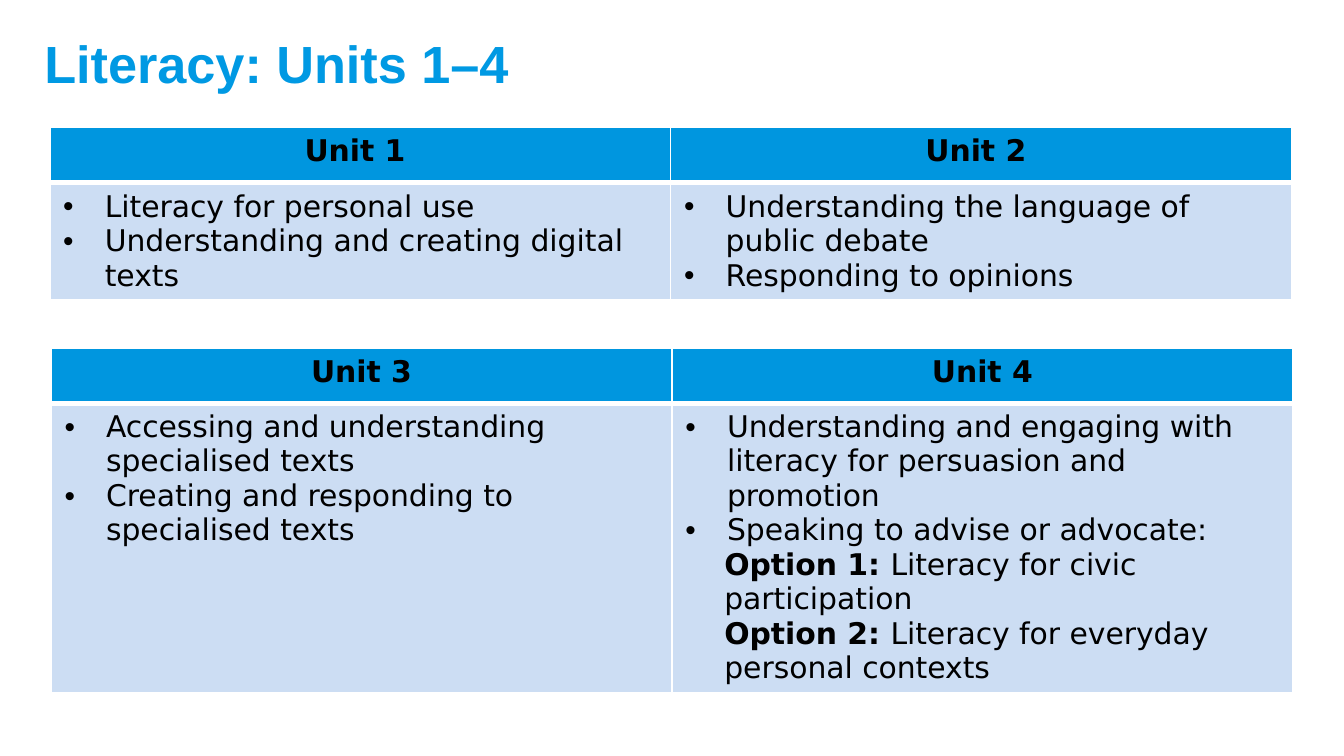
from dataclasses import dataclass

from lxml.etree import SubElement
from pptx import Presentation
from pptx.dml.color import RGBColor
from pptx.enum.text import MSO_ANCHOR, PP_ALIGN
from pptx.oxml.ns import qn
from pptx.util import Inches, Pt

COLORS = {
    "title": "0099E3",
    "header": "0096DF",
    "body": "CCDDF3",
    "text": "000000",
    "border": "FFFFFF",
}
SLIDE_WIDTH = Inches(10)
SLIDE_HEIGHT = SLIDE_WIDTH * 9 // 16
TITLE_FONT, TABLE_FONT = "Arial", "DejaVu Sans"
COLUMN_WIDTH, ROW_HEIGHT = 4.62, 0.41
BULLET_INDENT, OPTION_INDENT = 0.31, 0.29
THIN, THICK = 1, 3


@dataclass
class Item:
    text: str
    label: str = ""  # a labelled item is bold-led and has no bullet


@dataclass
class Unit:
    heading: str
    items: list[Item]


@dataclass
class UnitTable:
    left: float
    top: float
    height: float
    units: list[Unit]


UNIT_TABLES = [
    UnitTable(0.38, 2.59, 2.11, [
        Unit("Unit 3", [
            Item("Accessing and understanding specialised texts"),
            Item("Creating and responding to specialised texts"),
        ]),
        Unit("Unit 4", [
            Item("Understanding and engaging with literacy for persuasion and promotion"),
            Item("Speaking to advise or advocate:"),
            Item("Literacy for civic participation", "Option 1: "),
            Item("Literacy for everyday personal contexts", "Option 2: "),
        ]),
    ]),
    UnitTable(0.37, 0.95, 1.31, [
        Unit("Unit 1 ", [
            Item("Literacy for personal use"),
            Item("Understanding and creating digital texts"),
        ]),
        Unit("Unit 2 ", [
            Item("Understanding the language of public debate"),
            Item("Responding to opinions"),
        ]),
    ]),
]


def add_run(paragraph, text: str, size: int, font: str, color: str, bold: bool) -> None:
    run = paragraph.add_run()
    run.text = text
    run.font.size = Pt(size)
    run.font.name = font
    run.font.bold = bold
    run.font.color.rgb = RGBColor.from_string(COLORS[color])


def add_cell_run(paragraph, text: str, bold: bool = False) -> None:
    add_run(paragraph, text, 16, TABLE_FONT, "text", bold)


def style_cell(cell, fill: str, top: int, bottom: int) -> None:
    """Set the borders first, since the fill follows them in the cell's XML."""
    properties = cell._tc.get_or_add_tcPr()
    for side, width in (("L", THIN), ("R", THIN), ("T", top), ("B", bottom)):
        line = SubElement(properties, qn(f"a:ln{side}"), w=str(Pt(width)))
        line_fill = SubElement(line, qn("a:solidFill"))
        SubElement(line_fill, qn("a:srgbClr"), val=COLORS["border"])
    cell.fill.solid()
    cell.fill.fore_color.rgb = RGBColor.from_string(COLORS[fill])


def write_item(paragraph, item: Item) -> None:
    properties = paragraph._p.get_or_add_pPr()
    if item.label:
        properties.set("marL", str(Inches(OPTION_INDENT)))
        properties.set("indent", "0")
        add_cell_run(paragraph, item.label, bold=True)
    else:
        properties.set("marL", str(Inches(BULLET_INDENT)))
        properties.set("indent", str(-Inches(BULLET_INDENT)))
        SubElement(properties, qn("a:buFont"), typeface="Arial")
        SubElement(properties, qn("a:buChar"), char="•")
    add_cell_run(paragraph, item.text)


def draw_unit_table(slide, unit_table: UnitTable) -> None:
    units = unit_table.units
    frame = slide.shapes.add_table(
        2, len(units), Inches(unit_table.left), Inches(unit_table.top),
        Inches(COLUMN_WIDTH * len(units)), Inches(unit_table.height))
    table = frame.table
    # Rows keep a minimum height and grow with their text
    for row in table.rows:
        row.height = Inches(ROW_HEIGHT)
    frame.height = Inches(unit_table.height)

    for column, unit in enumerate(units):
        table.columns[column].width = Inches(COLUMN_WIDTH)
        header, body = table.cell(0, column), table.cell(1, column)
        style_cell(header, "header", THIN, THICK)
        style_cell(body, "body", THICK, THIN)

        heading = header.text_frame.paragraphs[0]
        heading.alignment = PP_ALIGN.CENTER
        add_cell_run(heading, unit.heading, bold=True)

        content = body.text_frame
        for index, item in enumerate(unit.items):
            write_item(content.add_paragraph() if index else content.paragraphs[0], item)


def draw_title(slide, text: str) -> None:
    title = slide.shapes.title
    title.left, title.top = Inches(0.23), Inches(0.14)
    title.width, title.height = Inches(9.53), Inches(0.65)
    title.text_frame.vertical_anchor = MSO_ANCHOR.MIDDLE
    paragraph = title.text_frame.paragraphs[0]
    paragraph.alignment = PP_ALIGN.LEFT
    add_run(paragraph, text, 28, TITLE_FONT, "title", True)


def main() -> None:
    presentation = Presentation()
    presentation.slide_width, presentation.slide_height = SLIDE_WIDTH, SLIDE_HEIGHT
    slide = presentation.slides.add_slide(presentation.slide_layouts[5])

    # Title
    draw_title(slide, "Literacy: Units 1–4")

    # Unit tables
    for unit_table in UNIT_TABLES:
        draw_unit_table(slide, unit_table)

    presentation.save("out.pptx")


if __name__ == "__main__":
    main()
